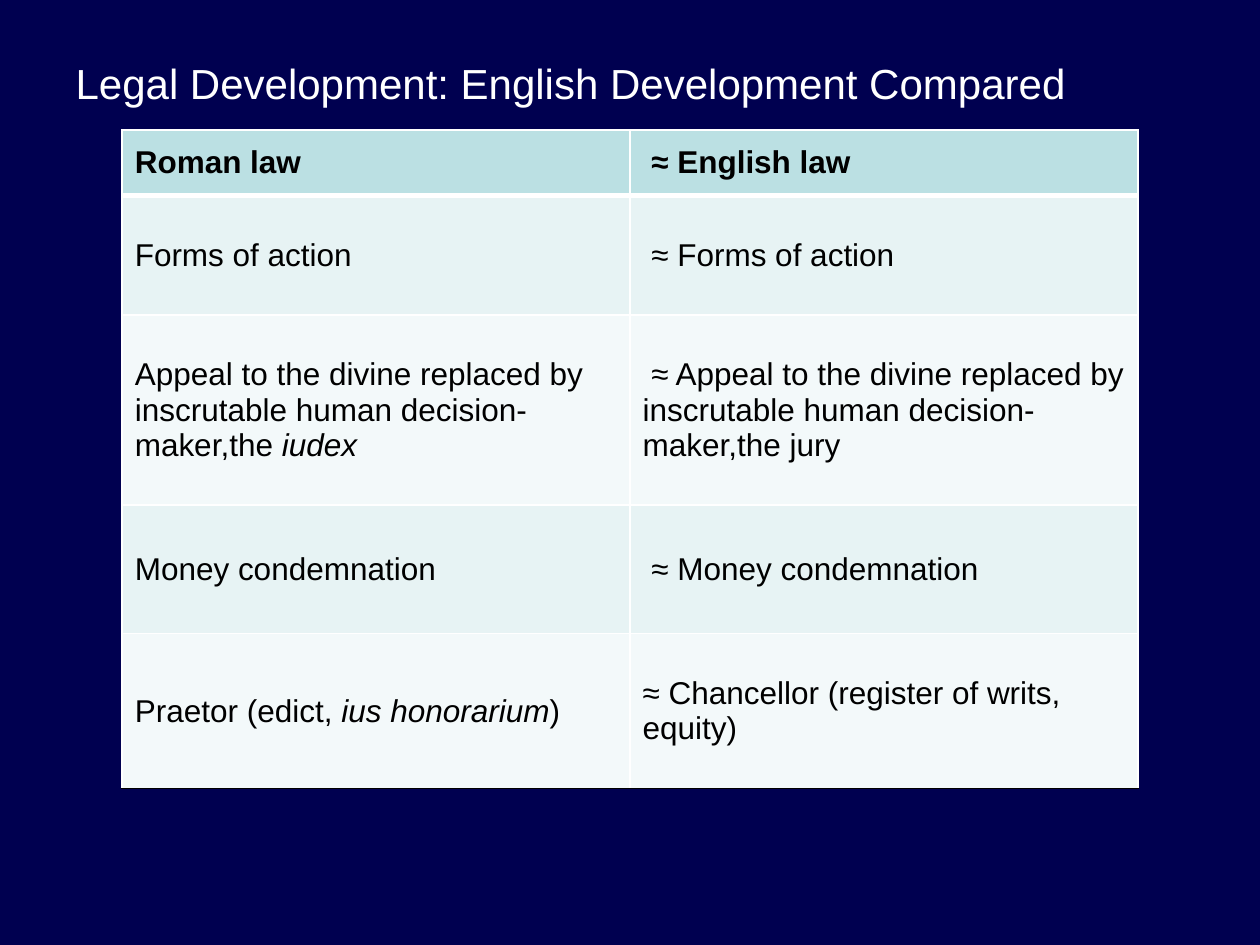
from lxml import etree
from pptx import Presentation
from pptx.dml.color import RGBColor
from pptx.enum.text import MSO_ANCHOR, PP_ALIGN
from pptx.oxml.ns import qn
from pptx.util import Inches, Pt

TOP, MIDDLE = MSO_ANCHOR.TOP, MSO_ANCHOR.MIDDLE
LEFT = PP_ALIGN.LEFT

NAVY = RGBColor(0x00, 0x00, 0x50)
WHITE = RGBColor(0xFF, 0xFF, 0xFF)
BLACK = RGBColor(0x00, 0x00, 0x00)
HEADER_FILL = RGBColor(0xBB, 0xE0, 0xE3)
BAND_FILLS = (RGBColor(0xF3, 0xF9, 0xFA), RGBColor(0xE7, 0xF3, 0xF4))

FONT = "Arial"
ROW_HEIGHTS = (0.52, 0.95, 1.51, 1.02, 1.23)
APPEAL = "Appeal to the divine replaced by inscrutable human decision-maker,the "
ROWS = (
    (("Roman law",), (" ≈ English law",)),
    (("Forms of action",), (" ≈ Forms of action",)),
    ((APPEAL, "iudex"), (" ≈ " + APPEAL + "jury",)),
    (("Money condemnation",), (" ≈ Money condemnation",)),
    (("Praetor (edict, ", "ius honorarium", ")"),
     ("≈ Chancellor (register of writs, equity)",)),
)


def add_run(p, text, size, color, bold=False, italic=False):
    """Append one formatted run to a paragraph."""
    r = p.add_run()
    r.text = text
    r.font.name = FONT
    r.font.size = Pt(size)
    r.font.color.rgb = color
    r.font.bold = bold
    r.font.italic = italic


def set_border(cell, side, color, width):
    """Draw one side of a cell: L, R, T or B."""
    tc_pr = cell._tc.get_or_add_tcPr()
    ln = etree.SubElement(tc_pr, qn(f"a:ln{side}"), w=str(Pt(width)))
    fill = etree.SubElement(ln, qn("a:solidFill"))
    etree.SubElement(fill, qn("a:srgbClr"), val=str(color))


def add_title(s, text, left, top, width, height):
    """Place and fill the title placeholder."""
    sp = s.shapes.title
    sp.left, sp.top, sp.width, sp.height = left, top, width, height
    tf = sp.text_frame
    tf.word_wrap = True
    tf.vertical_anchor = TOP
    p = tf.paragraphs[0]
    p.alignment = LEFT
    add_run(p, text, 24, WHITE)


def fill_cell(cell, parts, row):
    """Style one cell and write its parts, every second one in italics."""
    header, last = row == 0, row == len(ROWS) - 1
    for side in "LRT":
        set_border(cell, side, WHITE, 3 if side == "T" and row == 1 else 1)
    set_border(cell, "B", BLACK if last else WHITE, 3 if header else 1)
    cell.fill.solid()
    cell.fill.fore_color.rgb = HEADER_FILL if header else BAND_FILLS[row % 2]
    cell.vertical_anchor = MIDDLE
    p = cell.text_frame.paragraphs[0]
    for i, text in enumerate(parts):
        add_run(p, text, 18, BLACK, bold=header, italic=i % 2 == 1)


def add_comparison(s, left, top, width):
    """Build the table that compares Roman and English law."""
    height = Inches(sum(ROW_HEIGHTS))
    table = s.shapes.add_table(len(ROWS), 2, left, top, width, height).table
    for row, (row_height, cells) in enumerate(zip(ROW_HEIGHTS, ROWS)):
        table.rows[row].height = Inches(row_height)
        for col, parts in enumerate(cells):
            fill_cell(table.cell(row, col), parts, row)


def main():
    """Create the slide and save it."""
    prs = Presentation()
    prs.slide_width, prs.slide_height = Inches(10), Inches(7.5)
    s = prs.slides.add_slide(prs.slide_layouts[5])
    s.background.fill.solid()
    s.background.fill.fore_color.rgb = NAVY
    add_title(s, "Legal Development: English Development Compared",
              Inches(0.5), Inches(0.41), Inches(9), Inches(1.25))
    add_comparison(s, Inches(0.97), Inches(1.03), Inches(8.06))
    prs.save("out.pptx")


if __name__ == "__main__":
    main()
